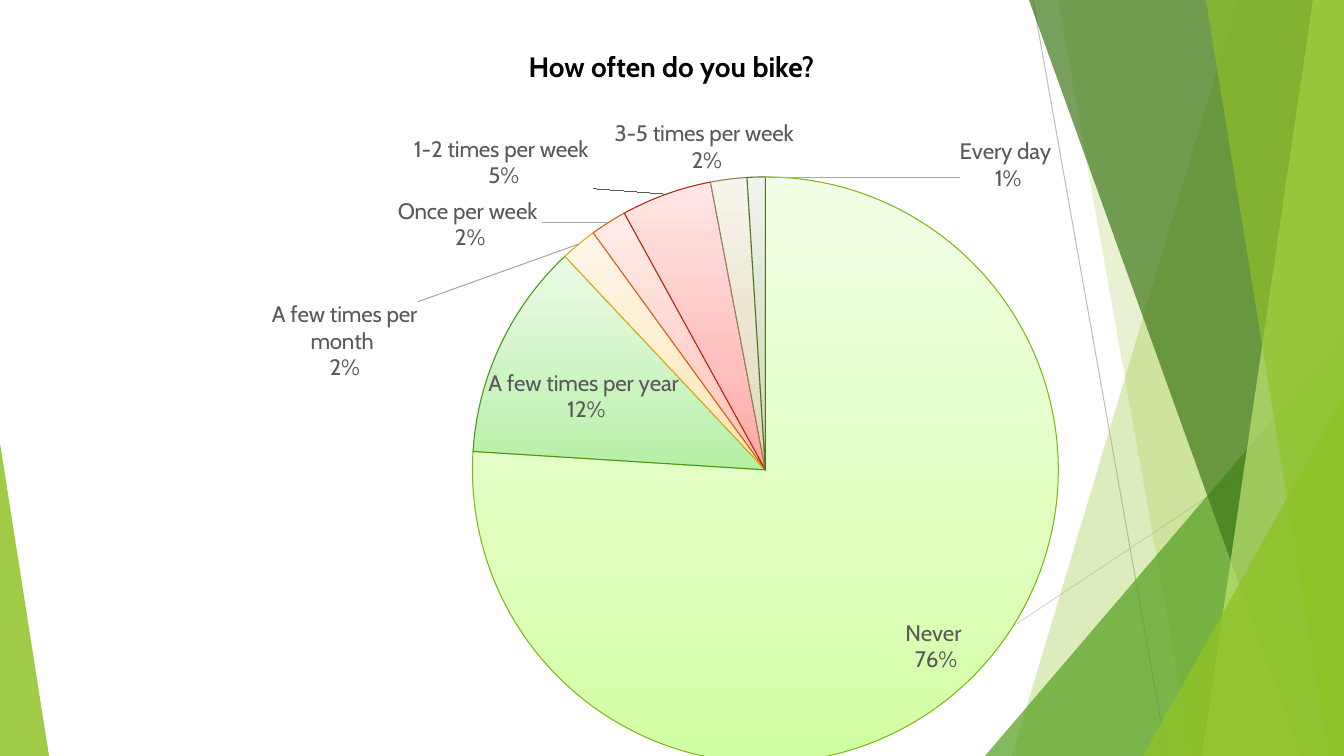
from copy import deepcopy

from pptx import Presentation
from pptx.chart.data import CategoryChartData
from pptx.dml.color import RGBColor
from pptx.enum.chart import XL_CHART_TYPE, XL_LABEL_POSITION
from pptx.enum.shapes import MSO_CONNECTOR, MSO_SHAPE
from pptx.enum.text import MSO_ANCHOR, MSO_AUTO_SIZE, PP_ALIGN
from pptx.oxml import parse_xml
from pptx.oxml.ns import nsdecls
from pptx.util import Pt

PIE = XL_CHART_TYPE.PIE
BEST = XL_LABEL_POSITION.BEST_FIT
STRAIGHT = MSO_CONNECTOR.STRAIGHT
TRIANGLE = MSO_SHAPE.ISOSCELES_TRIANGLE
TOP = MSO_ANCHOR.TOP
NO_FIT = MSO_AUTO_SIZE.NONE
CENTER = PP_ALIGN.CENTER

BLACK = RGBColor(0x00, 0x00, 0x00)
GRAY = RGBColor(0x59, 0x59, 0x59)
SILVER = RGBColor(0xBF, 0xBF, 0xBF)
PALE = RGBColor(0xD9, 0xD9, 0xD9)
LIME = RGBColor(0x90, 0xC2, 0x26)
GREEN = RGBColor(0x54, 0xA0, 0x21)
FOREST = RGBColor(0x3F, 0x78, 0x19)
LIGHT = RGBColor(0xC0, 0xE4, 0x74)

WIDE, HIGH = 1344, 756
SCALE = 12192000 / WIDE

# Category, value, gradient from bottom to top, outline
SLICES = [
    ("Never ", 76, ("D2FFA2", "DFFFBD", "F2FFE6"), "80B516"),
    ("A few times per year ", 12, ("B5EFA4", "CBF3C0", "EBFBE6"), "459714"),
    ("A few times per month ", 2, ("FFE3B1", "FFEBC8", "FFF7EA"), "DBAA10"),
    ("Once per week ", 2, ("FFBFB1", "FFD1C8", "FFEDEA"), "DE5A10"),
    ("1-2 times per week ", 5, ("FFA5A2", "FFBFBD", "FFE7E6"), "BC2010"),
    ("3-5 times per week ", 2, ("E0D6B5", "E8E2CB", "F7F4EB"), "8F8050"),
    ("Every day ", 1, ("C3D6B0", "D5E1C8", "EFF4EA"), "4F7020"),
]
STOPS = (0, 0.35, 1)

# Label shifts as shares of the chart's width and height, by slice
SHIFTS = {1: (0.18, 0.12), 2: (-0.15, 0.21), 3: (-0.06, 0.05), 6: (0.24, 0.03)}


def px(num):
    return round(num * SCALE)


class Deck:
    font = "Cabin"

    def __init__(self):
        self.file = Presentation()
        self.file.slide_width, self.file.slide_height = px(WIDE), px(HIGH)
        self.slide = self.file.slides.add_slide(self.file.slide_layouts[5])
        self.shapes = self.slide.shapes

    def title(self, text, x, y, w, h):
        box = self.shapes.title
        box.left, box.top, box.width, box.height = map(px, (x, y, w, h))
        frame = box.text_frame
        frame.word_wrap = False
        frame.auto_size = NO_FIT
        frame.vertical_anchor = TOP
        para = frame.paragraphs[0]
        para.alignment = CENTER
        para.line_spacing = 1.07
        para.space_after = Pt(8)
        run = para.add_run()
        run.text = text
        run.font.name, run.font.size, run.font.bold = self.font, Pt(20), True
        run.font.color.rgb = BLACK

    def line(self, x1, y1, x2, y2, color):
        line = self.shapes.add_connector(STRAIGHT, *map(px, (x1, y1, x2, y2)))
        line.line.color.rgb = color
        line.line.width = Pt(0.75)
        line._element.spPr.append(parse_xml(f"<a:effectLst {nsdecls('a')}/>"))

    def paint(self, shape, color, alpha):
        shape.shadow.inherit = False
        shape.line.fill.background()
        shape.fill.solid()
        shape.fill.fore_color.rgb = color
        tint = shape._element.spPr.xpath("./a:solidFill/a:srgbClr")[0]
        tint.append(parse_xml(f'<a:alpha {nsdecls("a")} val="{alpha * 1000}"/>'))

    def band(self, top, base, color, alpha):
        """Fill from a slanted edge to the right side of the slide."""
        form = self.shapes.build_freeform(px(top), 0)
        form.add_line_segments(
            [(px(x), px(y)) for x, y in ((WIDE, 0), (WIDE, HIGH), (base, HIGH))])
        self.paint(form.convert_to_shape(), color, alpha)

    def wedge(self, x, y, w, peak, color, alpha):
        """Draw a triangle that stands on the bottom of the slide."""
        shape = self.shapes.add_shape(TRIANGLE, *map(px, (x, y, w, HIGH - y)))
        shape.adjustments[0] = peak
        self.paint(shape, color, alpha)

    def pie(self, x, y, w, h, plot):
        data = CategoryChartData()
        data.categories = [row[0] for row in SLICES]
        data.add_series("Series 1", [row[1] for row in SLICES])
        chart = self.shapes.add_chart(PIE, *map(px, (x, y, w, h)), data).chart
        chart.has_title = chart.has_legend = False
        chart.font.name, chart.font.size = self.font, Pt(10)
        chart.font.color.rgb = BLACK
        chart.plots[0].vary_by_categories = True
        self.place(chart, (plot[0] - x) / w, (plot[1] - y) / h,
                   plot[2] / w, plot[2] / h)
        series = chart.plots[0].series[0]
        for num, (_, _, colors, edge) in enumerate(SLICES):
            self.slice(series.points[num].format, series, colors, edge)
        self.label(series)

    def place(self, chart, x, y, w, h):
        area = chart._chartSpace.chart.plotArea
        for old in area.xpath("./c:layout"):
            area.remove(old)
        area.insert(0, parse_xml(
            f'<c:layout {nsdecls("c")}><c:manualLayout>'
            '<c:layoutTarget val="inner"/><c:xMode val="edge"/><c:yMode val="edge"/>'
            f'<c:x val="{x:.3f}"/><c:y val="{y:.3f}"/>'
            f'<c:w val="{w:.3f}"/><c:h val="{h:.3f}"/>'
            '</c:manualLayout></c:layout>'))

    def slice(self, style, series, colors, edge):
        style.line.color.rgb = RGBColor.from_string(edge)
        style.line.width = Pt(0.75)
        style.fill.gradient()
        style.fill.gradient_angle = 90
        stops = series._element.xpath("./c:dPt/c:spPr/a:gradFill/a:gsLst")[-1]
        stops.append(deepcopy(stops[0]))
        for stop, pos, color in zip(style.fill.gradient_stops, STOPS, colors):
            stop.position = pos
            stop.color.rgb = RGBColor.from_string(color)

    def label(self, series):
        labels = series.data_labels
        labels.font.name, labels.font.size = self.font, Pt(16)
        labels.font.color.rgb = GRAY
        labels.position = BEST
        labels.show_value = False
        labels.show_category_name = labels.show_percentage = True
        root = labels._element
        for old in root.xpath("./c:showLeaderLines"):
            root.remove(old)
        # Shared settings go to each moved label
        parts = list(root)
        for spot, (num, (x, y)) in enumerate(SHIFTS.items()):
            item = parse_xml(
                f'<c:dLbl {nsdecls("c")}><c:idx val="{num}"/><c:layout>'
                f'<c:manualLayout><c:x val="{x}"/><c:y val="{y}"/>'
                '</c:manualLayout></c:layout></c:dLbl>')
            item.extend(deepcopy(part) for part in parts)
            root.insert(spot, item)
        root.append(parse_xml(f'<c:showLeaderLines {nsdecls("c")} val="1"/>'))
        root.append(parse_xml(
            f'<c:leaderLines {nsdecls("c", "a")}><c:spPr><a:ln w="9525"><a:solidFill>'
            '<a:srgbClr val="A6A6A6"/></a:solidFill></a:ln></c:spPr></c:leaderLines>'))


def main():
    deck = Deck()

    # Backdrop
    deck.line(1033, 0, 1167, HIGH, SILVER)
    deck.line(WIDE, 406, 818, HIGH, PALE)
    deck.band(1238, 1012, LIME, 30)
    deck.band(1058, 1192, LIME, 20)
    deck.wedge(985, 336, 359, 1, GREEN, 72)
    deck.band(1029, 1301, FOREST, 70)
    deck.band(1313, 1202, LIGHT, 70)
    deck.band(1206, 1329, LIME, 65)
    deck.wedge(1143, 396, 201, 1, LIME, 80)
    deck.wedge(0, 443, 49, 0, LIME, 85)

    # Chart and title
    deck.pie(147, 105, 1050, 672, plot=(472, 177, 586))
    deck.title("How often do you bike?", 502, 42, 339, 43)

    deck.file.save("out.pptx")


if __name__ == "__main__":
    main()
